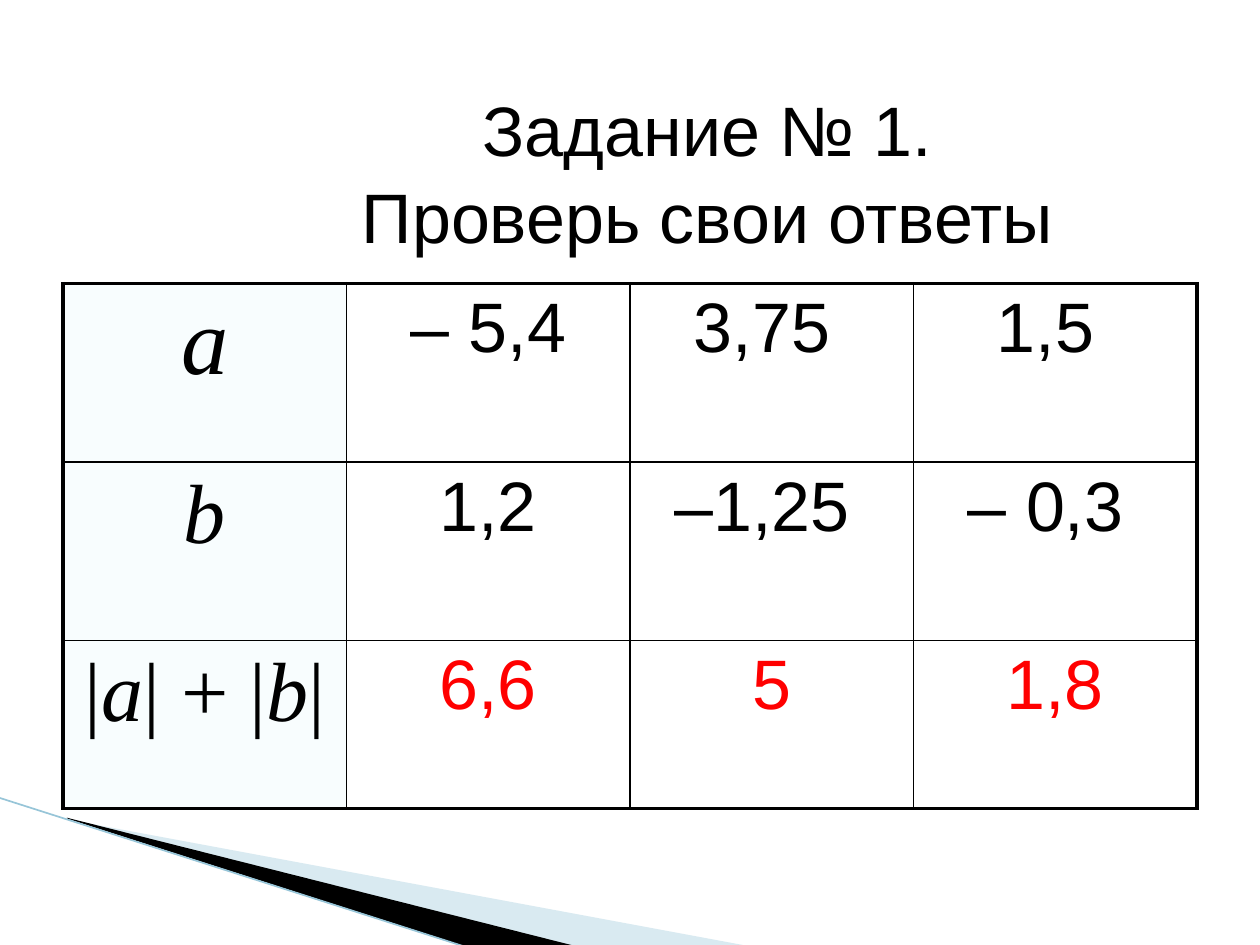
from lxml.etree import SubElement
from pptx import Presentation
from pptx.dml.color import RGBColor
from pptx.enum.shapes import MSO_CONNECTOR
from pptx.enum.text import MSO_AUTO_SIZE, PP_ALIGN
from pptx.oxml.ns import qn
from pptx.util import Pt

BLACK = RGBColor(0x00, 0x00, 0x00)
RED = RGBColor(0xFF, 0x00, 0x00)
HEADER_FILL = RGBColor(0xF8, 0xFD, 0xFE)
PALE_BLUE = RGBColor(0xA0, 0xCB, 0xDC)
LINE_BLUE = RGBColor(0x97, 0xC5, 0xD8)

PLAIN = {"name": "Arial", "size": Pt(40), "italic": False}
MATH = {"name": "Times New Roman", "size": Pt(48), "italic": False}
VARIABLE = {**MATH, "italic": True}

HEADERS = [
    [("а", {**VARIABLE, "size": Pt(54)})],
    [("b", VARIABLE)],
    [("|", MATH), ("a", VARIABLE), ("| + |", MATH), ("b", VARIABLE), ("|", MATH)],
]
VALUES = [
    ["– 5,4", "3,75 ", "1,5 "],
    ["1,2", "–1,25 ", "– 0,3 "],
    ["6,6", "5", "1,8"],
]
ROW_HEIGHTS = [102, 102, 96]
COL_WIDTH = 162
OUTER, INNER = 2.25, 1


def add_wedge(s, points, color, alpha=None):
    """Filled outline without a line; alpha is opacity in percent."""
    corners = [(Pt(x), Pt(y)) for x, y in points]
    builder = s.shapes.build_freeform(*corners[0])
    builder.add_line_segments(corners[1:], close=True)
    sp = builder.convert_to_shape()
    sp.shadow.inherit = False
    sp.line.fill.background()
    sp.fill.solid()
    sp.fill.fore_color.rgb = color
    if alpha is not None:
        clr = sp.fill._xPr.find(qn("a:solidFill"))[0]
        SubElement(clr, qn("a:alpha"), val=str(alpha * 1000))


def add_line(s, x1, y1, x2, y2, color, width):
    sp = s.shapes.add_connector(MSO_CONNECTOR.STRAIGHT, Pt(x1), Pt(y1), Pt(x2), Pt(y2))
    sp.line.color.rgb = color
    sp.line.width = Pt(width)
    SubElement(sp._element.spPr, qn("a:effectLst"))


def write_runs(p, runs, color=BLACK):
    p.alignment = PP_ALIGN.CENTER
    for text, fmt in runs:
        r = p.add_run()
        r.text = text
        for key, value in fmt.items():
            setattr(r.font, key, value)
        r.font.color.rgb = color


def set_borders(cell, widths):
    tcPr = cell._tc.get_or_add_tcPr()
    for side, width in widths.items():
        ln = SubElement(tcPr, qn("a:ln" + side), w=str(Pt(width)))
        fill = SubElement(ln, qn("a:solidFill"))
        SubElement(fill, qn("a:srgbClr"), val=str(BLACK))


def add_answer_table(s):
    rows, cols = len(VALUES), len(VALUES[0]) + 1
    frame = s.shapes.add_table(rows, cols, Pt(36), Pt(162),
                               Pt(COL_WIDTH * cols), Pt(sum(ROW_HEIGHTS)))
    table = frame.table
    table.first_row = table.horz_banding = False
    for col in table.columns:
        col.width = Pt(COL_WIDTH)
    for i, height in enumerate(ROW_HEIGHTS):
        table.rows[i].height = Pt(height)
        contents = [HEADERS[i]] + [[(value, PLAIN)] for value in VALUES[i]]
        for j, runs in enumerate(contents):
            cell = table.cell(i, j)
            edges = {"L": j == 0, "R": j == cols - 1, "T": i == 0, "B": i == rows - 1}
            set_borders(cell, {k: OUTER if outer else INNER for k, outer in edges.items()})
            if j == 0:
                cell.fill.solid()
                cell.fill.fore_color.rgb = HEADER_FILL
            else:
                cell.fill.background()
            is_answer = i == rows - 1 and j > 0
            write_runs(cell.text_frame.paragraphs[0], runs, RED if is_answer else BLACK)


def add_title(s, lines):
    tf = s.shapes.add_textbox(Pt(197.3), Pt(41.8), Pt(414), Pt(104.4)).text_frame
    tf.word_wrap = False
    tf.auto_size = MSO_AUTO_SIZE.SHAPE_TO_FIT_TEXT
    tf.margin_top = Pt(7.6)
    for i, line in enumerate(lines):
        p = tf.add_paragraph() if i else tf.paragraphs[0]
        if i:
            p.space_before = Pt(2)
        write_runs(p, [(line, PLAIN)])


def main():
    prs = Presentation()
    prs.slide_width, prs.slide_height = Pt(720), Pt(540)
    s = prs.slides.add_slide(prs.slide_layouts[6])
    add_wedge(s, [(39.6, 468.5), (428.4, 540.7), (328.3, 540.7), (39.6, 468)], PALE_BLUE, 40)
    add_wedge(s, [(38.2, 467.3), (329, 540.7), (267.8, 541.4), (38.9, 468)], BLACK)
    add_line(s, -0.7, 455.8, 267.1, 541.4, LINE_BLUE, 0.95)
    add_answer_table(s)
    add_title(s, ["Задание № 1.", "Проверь свои ответы"])
    prs.save("out.pptx")


if __name__ == "__main__":
    main()
